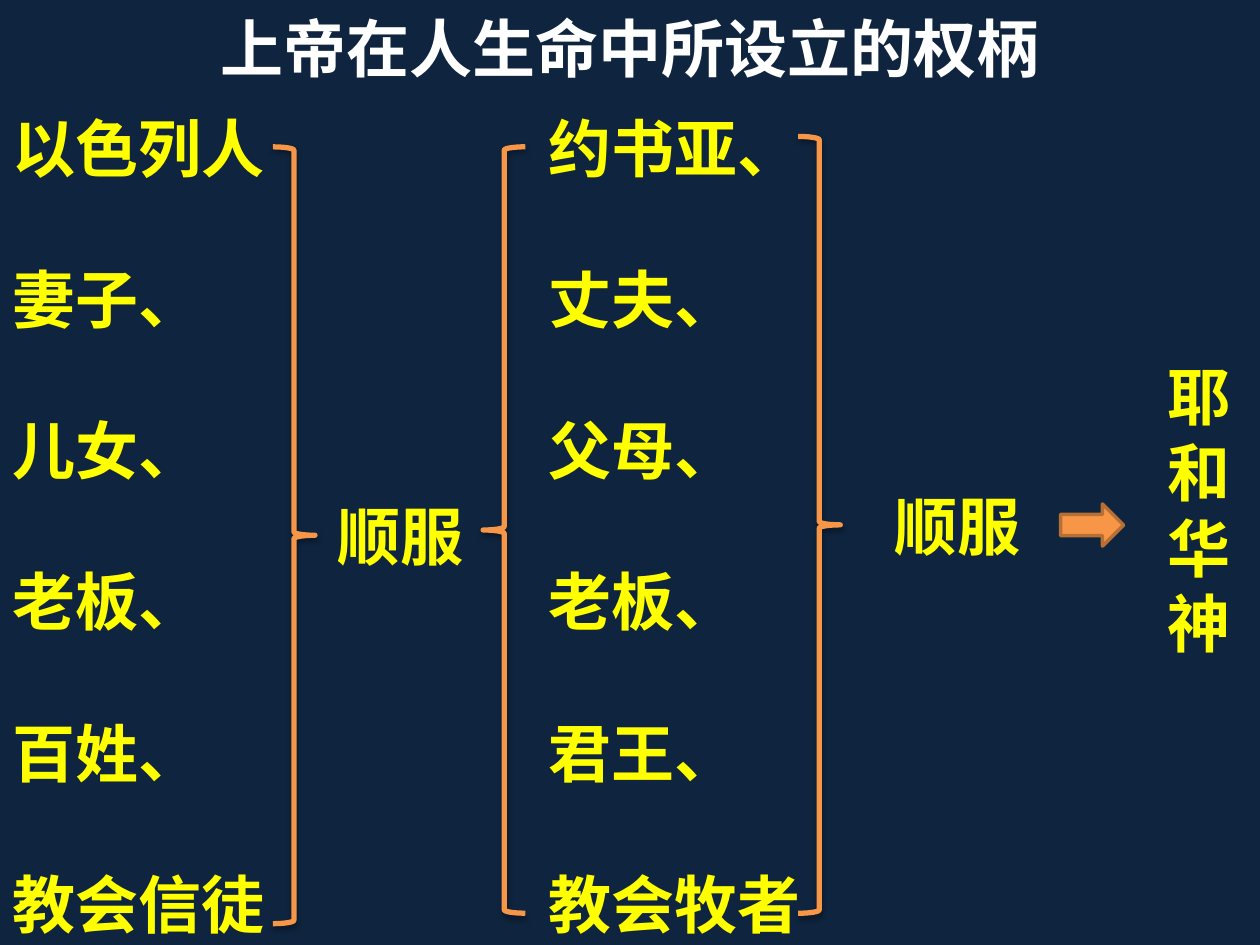
from lxml import etree
from pptx import Presentation
from pptx import util as u
from pptx.dml.color import RGBColor
from pptx.enum import shapes, text
from pptx.oxml import ns

NAVY = RGBColor(0x0F, 0x24, 0x3E)
YELLOW = RGBColor(0xFF, 0xFF, 0x00)
WHITE = RGBColor(0xFF, 0xFF, 0xFF)
ORANGE = RGBColor(0xF7, 0x96, 0x46)
BROWN = RGBColor(0xB7, 0x6F, 0x34)
FONT = "Noto Sans CJK SC"
LINE = u.Pt(43.2)

FOLLOWERS = ["以色列人", "妻子、", "儿女、", "老板、", "百姓、", "教会信徒"]
LEADERS = ["约书亚、", "丈夫、", "父母、", "老板、", "君王、", "教会牧者"]
BRACES = [
    ((5.5, 2.96, 0.85, 15.66), 180),
    ((9.74, 2.96, 0.85, 15.45), 0),
    ((16.09, 2.75, 0.85, 15.66), 180),
]


def cm(box):
    return [u.Cm(length) for length in box]


def set_values(target, values):
    for name, value in values.items():
        setattr(target, name, value)


def write(holder, box, lines, color=YELLOW, align=text.PP_ALIGN.LEFT):
    left, top, width, height = cm(box)
    set_values(holder, {"left": left, "top": top, "width": width, "height": height})
    frame = holder.text_frame
    set_values(frame, {
        "text": "\n".join(lines),
        "word_wrap": True,
        "auto_size": text.MSO_AUTO_SIZE.NONE,
        "vertical_anchor": text.MSO_ANCHOR.MIDDLE,
    })
    for index, paragraph in enumerate(frame.paragraphs):
        set_values(paragraph, {
            "alignment": align,
            "line_spacing": LINE,
            "space_before": LINE if index else u.Pt(0),
            "space_after": u.Pt(0),
        })
        properties = paragraph._p.get_or_add_pPr()
        properties.set("marL", "0")
        properties.set("indent", "0")
        etree.SubElement(properties, ns.qn("a:buNone"))
        font = paragraph.runs[0].font
        set_values(font, {"size": u.Pt(36), "bold": True, "name": FONT})
        font.color.rgb = color
        etree.SubElement(font._element, ns.qn("a:ea"), typeface=FONT)


def add_label(slide, box, words):
    write(slide.shapes.add_textbox(*cm(box)), box, [words])


def add_shadow(shape):
    effects = etree.SubElement(shape._element.spPr, ns.qn("a:effectLst"))
    shadow = etree.SubElement(
        effects, ns.qn("a:outerShdw"), blurRad=str(u.Pt(3.1)),
        dist=str(u.Pt(1.8)), dir="5400000", rotWithShape="0")
    black = etree.SubElement(shadow, ns.qn("a:srgbClr"), val="000000")
    etree.SubElement(black, ns.qn("a:alpha"), val="35000")


def add_brace(slide, box, rotation):
    brace = slide.shapes.add_shape(shapes.MSO_SHAPE.LEFT_BRACE, *cm(box))
    brace.rotation = rotation
    brace.adjustments[0] = 0.08
    brace.adjustments[1] = 0.5
    brace.fill.background()
    brace.line.color.rgb = ORANGE
    brace.line.width = u.Pt(3)
    add_shadow(brace)


def add_arrow(slide, box):
    arrow = slide.shapes.add_shape(shapes.MSO_SHAPE.RIGHT_ARROW, *cm(box))
    arrow.shadow.inherit = False
    arrow.fill.solid()
    arrow.fill.fore_color.rgb = ORANGE
    arrow.line.color.rgb = BROWN
    arrow.line.width = u.Pt(2)


def main():
    deck = Presentation()
    deck.slide_width, deck.slide_height = u.Cm(25.4), u.Cm(19.05)
    slide = deck.slides.add_slide(deck.slide_layouts[3])
    slide.background.fill.solid()
    slide.background.fill.fore_color.rgb = NAVY

    heading, followers, leaders = list(slide.placeholders)[:3]
    write(heading, (0, 0, 25.4, 1.9), ["上帝在人生命中所设立的权柄"],
          WHITE, text.PP_ALIGN.CENTER)
    write(followers, (0, 2.12, 6.15, 16.93), FOLLOWERS)
    write(leaders, (10.8, 2.12, 5.92, 16.93), LEADERS)

    add_label(slide, (6.56, 2.12, 4.23, 17.35), "顺服")
    add_label(slide, (17.78, 2.12, 3.18, 16.93), "顺服")
    add_label(slide, (23.28, 1.48, 2.12, 17.57), "耶和华神")
    for box, rotation in BRACES:
        add_brace(slide, box, rotation)
    add_arrow(slide, (21.38, 10.16, 1.27, 0.85))

    deck.save("out.pptx")


if __name__ == "__main__":
    main()
